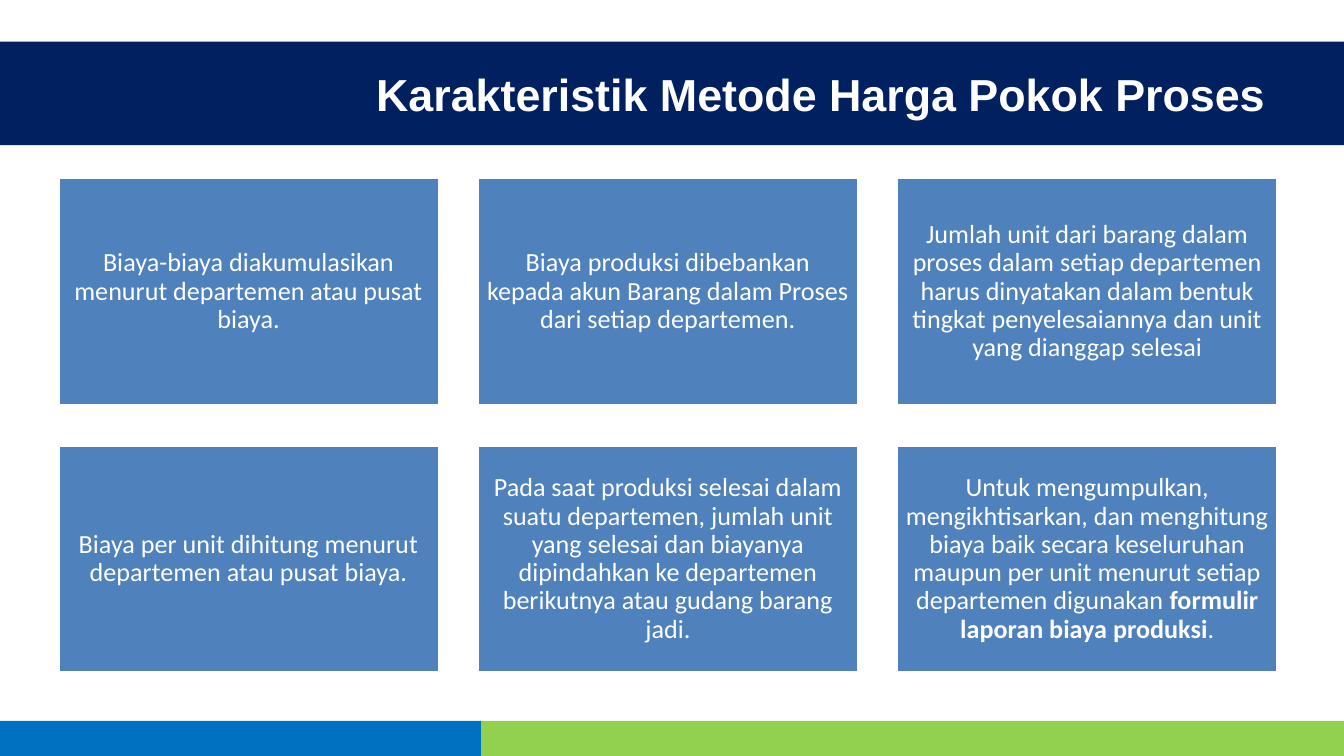
from pptx import Presentation
from pptx.dml.color import RGBColor
from pptx.enum.shapes import MSO_SHAPE
from pptx.enum.text import MSO_ANCHOR, PP_ALIGN
from pptx.util import Inches, Pt

RECTANGLE = MSO_SHAPE.RECTANGLE
MIDDLE = MSO_ANCHOR.MIDDLE
CENTER, RIGHT = PP_ALIGN.CENTER, PP_ALIGN.RIGHT

SLIDE_WIDTH = 10
SLIDE_HEIGHT = SLIDE_WIDTH * 9 / 16
FOOTER_HEIGHT = 0.26

COLORS = {
    "white": "FFFFFF",
    "navy": "002060",
    "blue": "0070C0",
    "green": "92D050",
    "card": "4F81BD",
}
TITLE = "Karakteristik Metode Harga Pokok Proses"
CHARACTERISTICS = [
    [("Biaya-biaya diakumulasikan menurut departemen atau pusat biaya.", False)],
    [("Biaya produksi dibebankan kepada akun Barang dalam Proses dari setiap departemen.", False)],
    [("Jumlah unit dari barang dalam proses dalam setiap departemen harus dinyatakan dalam "
      "bentuk tingkat penyelesaiannya dan unit yang dianggap selesai", False)],
    [("Biaya per unit dihitung menurut departemen atau pusat biaya.", False)],
    [("Pada saat produksi selesai dalam suatu departemen, jumlah unit yang selesai dan biayanya "
      "dipindahkan ke departemen berikutnya atau gudang barang jadi.", False)],
    [("Untuk mengumpulkan, mengikhtisarkan, dan menghitung biaya baik secara keseluruhan maupun "
      "per unit menurut setiap departemen digunakan ", False),
     ("formulir laporan biaya produksi", True),
     (".", False)],
]


def color(name):
    """Return the named palette colour."""
    return RGBColor.from_string(COLORS[name])


def add_rectangle(slide, left, top, width, height, fill):
    """Add a plain filled rectangle without outline or shadow."""
    shape = slide.shapes.add_shape(
        RECTANGLE, Inches(left), Inches(top), Inches(width), Inches(height))
    shape.shadow.inherit = False
    shape.fill.solid()
    shape.fill.fore_color.rgb = color(fill)
    shape.line.fill.background()
    return shape


def style_paragraph(paragraph, alignment, font_name, size):
    """Set the alignment and white font of a paragraph."""
    paragraph.alignment = alignment
    paragraph.font.name = font_name
    paragraph.font.size = Pt(size)
    paragraph.font.color.rgb = color("white")


def add_header(slide, left, top, width, height):
    """Draw the title band with its right-aligned title."""
    add_rectangle(slide, left, top, width, height, "navy")
    title = slide.shapes.add_textbox(
        Inches(left + 1.66), Inches(top), Inches(width - 2.15), Inches(height))
    frame = title.text_frame
    frame.word_wrap = True
    frame.vertical_anchor = MIDDLE
    paragraph = frame.paragraphs[0]
    paragraph.text = TITLE
    style_paragraph(paragraph, RIGHT, "Arial", 24)
    paragraph.font.bold = True


def add_footer(slide, left, top, width, height):
    """Draw the two-coloured footer strip."""
    blue_width = 3.58
    add_rectangle(slide, left, top, blue_width, height, "blue")
    add_rectangle(slide, left + blue_width, top, width - blue_width, height, "green")


def add_card(slide, left, top, width, height, runs):
    """Draw one card with its centred text."""
    card = add_rectangle(slide, left, top, width, height, "card")
    card.line.color.rgb = color("white")
    card.line.width = Pt(2)
    frame = card.text_frame
    frame.word_wrap = True
    frame.vertical_anchor = MIDDLE
    frame.margin_left = frame.margin_right = Inches(0.06)
    frame.margin_top = frame.margin_bottom = Inches(0.06)
    paragraph = frame.paragraphs[0]
    style_paragraph(paragraph, CENTER, "Calibri", 14)
    paragraph.line_spacing = 0.9
    for text, bold in runs:
        run = paragraph.add_run()
        run.text = text
        if bold:
            run.font.bold = True


def add_card_grid(slide, left, top, width, height, columns=3, gap_x=0.28, gap_y=0.29):
    """Lay the characteristics out as an even grid of cards."""
    rows = len(CHARACTERISTICS) // columns
    card_width = (width - gap_x * (columns - 1)) / columns
    card_height = (height - gap_y * (rows - 1)) / rows
    for index, runs in enumerate(CHARACTERISTICS):
        row, column = divmod(index, columns)
        add_card(slide, left + column * (card_width + gap_x),
                 top + row * (card_height + gap_y), card_width, card_height, runs)


def main():
    """Build and save the presentation."""
    presentation = Presentation()
    presentation.slide_width = Inches(SLIDE_WIDTH)
    presentation.slide_height = Inches(SLIDE_HEIGHT)
    slide = presentation.slides.add_slide(presentation.slide_layouts[6])
    add_footer(slide, 0, SLIDE_HEIGHT - FOOTER_HEIGHT, SLIDE_WIDTH, FOOTER_HEIGHT)
    add_header(slide, 0, 0.31, SLIDE_WIDTH, 0.77)
    add_card_grid(slide, 0.43, 1.32, 9.08, 3.69)
    presentation.save("out.pptx")


if __name__ == "__main__":
    main()
